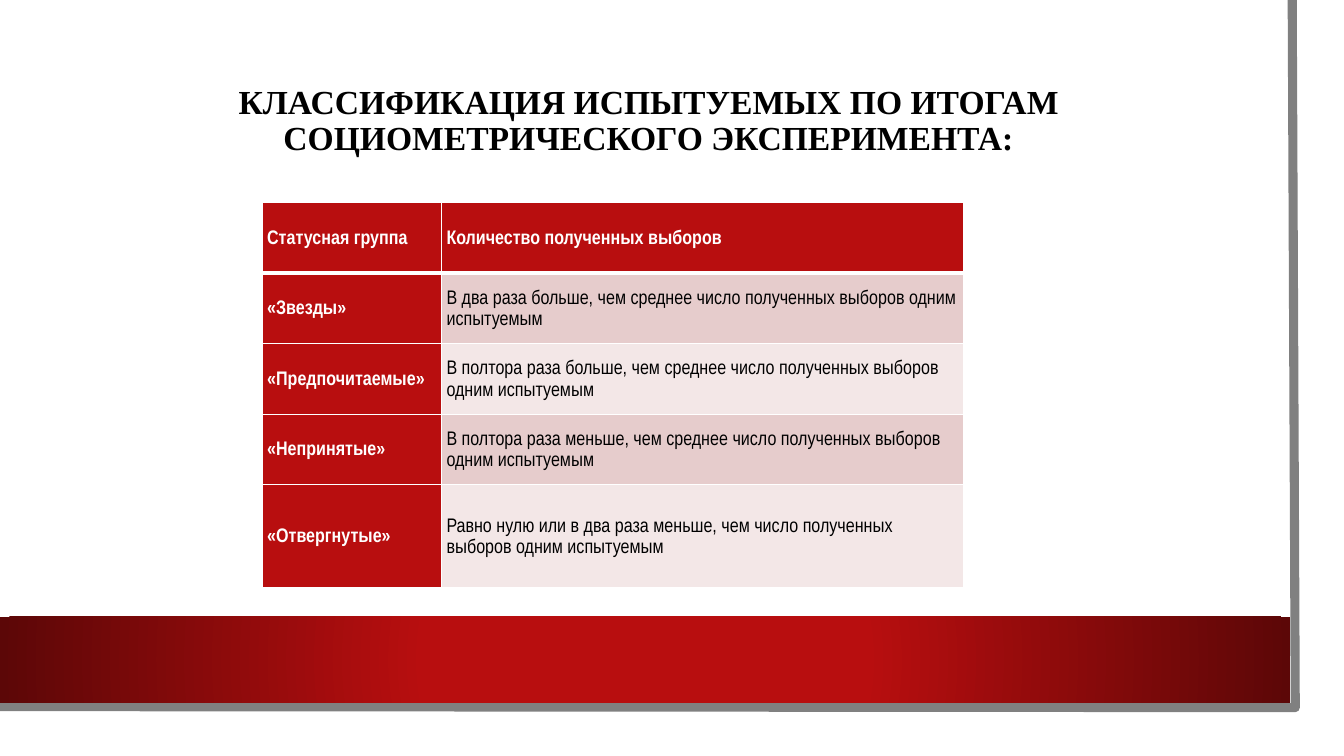
from lxml import etree
from pptx import Presentation
from pptx.dml.color import RGBColor
from pptx.enum.shapes import MSO_SHAPE
from pptx.enum.text import MSO_ANCHOR, PP_ALIGN
from pptx.oxml.ns import qn
from pptx.util import Pt

RECTANGLE = MSO_SHAPE.RECTANGLE
MIDDLE = MSO_ANCHOR.MIDDLE
CENTER = PP_ALIGN.CENTER

WHITE, BLACK, GRAY = "FFFFFF", "000000", "808080"
RED, DARK_RED = "B80E0F", "5C0707"
ROW_TINTS = ("E6CCCC", "F3E7E7")

TITLE = "КЛАССИФИКАЦИЯ ИСПЫТУЕМЫХ ПО ИТОГАМ СОЦИОМЕТРИЧЕСКОГО ЭКСПЕРИМЕНТА:"
STATUS_ROWS = [
    ("Статусная группа", "Количество полученных выборов"),
    ("«Звезды»", "В два раза больше, чем среднее число полученных выборов одним испытуемым"),
    ("«Предпочитаемые»", "В полтора раза больше, чем среднее число полученных выборов одним испытуемым"),
    ("«Непринятые»", "В полтора раза меньше, чем среднее число полученных выборов одним испытуемым"),
    ("«Отвергнутые»", "Равно нулю или в два раза меньше, чем число полученных выборов одним испытуемым"),
]
COLUMN_WIDTHS = (128.16, 372.96)
ROW_HEIGHTS = (50.4, 50.4, 50.4, 50.4, 73.44)

TITLE_FONT = {"name": "Times New Roman", "size": Pt(24), "bold": True}
CELL_FONT = {"name": "Arial Narrow", "size": Pt(14)}
TITLE_FRAME = {"word_wrap": True, "vertical_anchor": MIDDLE, "margin_bottom": Pt(29)}
TITLE_PARAGRAPH = {"alignment": CENTER, "line_spacing": 0.9}
CELL_PARAGRAPH = {"line_spacing": 1.15, "space_after": Pt(6)}
CELL_FRAME = {
    "vertical_anchor": MIDDLE,
    "margin_left": Pt(3.6),
    "margin_top": Pt(2.9),
    "margin_right": Pt(2.9),
    "margin_bottom": Pt(2.9),
}


def rgb(color):
    return RGBColor.from_string(color)


def apply(target, values):
    for name, value in values.items():
        setattr(target, name, value)


def write(frame, text, paragraph_format, font_format, color):
    paragraph = frame.paragraphs[0]
    apply(paragraph, paragraph_format)
    run = paragraph.add_run()
    run.text = text
    apply(run.font, font_format)
    run.font.color.rgb = rgb(color)


def add_panel(slide, left, top, width, height):
    panel = slide.shapes.add_shape(RECTANGLE, Pt(left), Pt(top), Pt(width), Pt(height))
    panel.shadow.inherit = False
    panel.line.fill.background()
    panel.fill.solid()
    panel.fill.fore_color.rgb = rgb(WHITE)
    return panel


def fill_radial(shape, stops):
    shape.fill.background()
    properties = shape.fill._xPr
    no_fill = properties.find(qn("a:noFill"))
    gradient = etree.Element(qn("a:gradFill"), rotWithShape="1")
    stop_list = etree.SubElement(gradient, qn("a:gsLst"))
    for position, color in stops:
        stop = etree.SubElement(stop_list, qn("a:gs"), pos=str(position * 1000))
        etree.SubElement(stop, qn("a:srgbClr"), val=color)
    circle = etree.SubElement(gradient, qn("a:path"), {"path": "circle"})
    etree.SubElement(circle, qn("a:fillToRect"), {side: "50000" for side in "ltrb"})
    properties.replace(no_fill, gradient)


def add_backdrop(slide, left, top, width, height):
    # White sheet
    add_panel(slide, left, top, width, height)

    # Gray edge along the right and the bottom
    right, bottom = left + width - 18, top + height - 18
    builder = slide.shapes.build_freeform(Pt(right - 2.16), Pt(top))
    builder.add_line_segments(
        [(Pt(right), Pt(bottom)), (Pt(left - 2.16), Pt(bottom - 0.72))], close=False
    )
    edge = builder.convert_to_shape()
    edge.shadow.inherit = False
    edge.fill.background()
    edge.line.color.rgb = rgb(GRAY)
    edge.line.width = Pt(6.5)

    # Red band
    band = add_panel(slide, left, bottom - 64.8, right - 3.6, 61.2)
    fill_radial(band, [(34, RED), (100, DARK_RED)])


def add_title(slide, left, top, width, height):
    title = slide.shapes.add_textbox(Pt(left), Pt(top), Pt(width), Pt(height))
    apply(title.text_frame, TITLE_FRAME)
    write(title.text_frame, TITLE, TITLE_PARAGRAPH, TITLE_FONT, BLACK)


def add_borders(cell, bottom_width):
    properties = cell._tc.get_or_add_tcPr()
    widths = {"a:lnL": 1, "a:lnR": 1, "a:lnT": 1, "a:lnB": bottom_width}
    for index, (tag, width) in enumerate(widths.items()):
        border = etree.Element(qn(tag), w=str(Pt(width)))
        fill = etree.SubElement(border, qn("a:solidFill"))
        etree.SubElement(fill, qn("a:srgbClr"), val=WHITE)
        properties.insert(index, border)


def add_status_table(slide, left, top, width, height):
    table = slide.shapes.add_table(
        len(ROW_HEIGHTS), len(COLUMN_WIDTHS), Pt(left), Pt(top), Pt(width), Pt(height)
    ).table
    for column, column_width in zip(table.columns, COLUMN_WIDTHS):
        column.width = Pt(column_width)
    for row, row_height in zip(table.rows, ROW_HEIGHTS):
        row.height = Pt(row_height)

    for row_index, texts in enumerate(STATUS_ROWS):
        for column_index, text in enumerate(texts):
            cell = table.cell(row_index, column_index)
            is_heading = row_index == 0 or column_index == 0
            apply(cell, CELL_FRAME)
            cell.fill.solid()
            cell.fill.fore_color.rgb = rgb(RED if is_heading else ROW_TINTS[(row_index - 1) % 2])
            font = {**CELL_FONT, "bold": is_heading}
            write(cell.text_frame, text, CELL_PARAGRAPH, font, WHITE if is_heading else BLACK)
            # The first body row repeats the thick rule as its own thin top edge
            add_borders(cell, 3 if row_index == 0 else 1)


def main():
    presentation = Presentation()
    presentation.slide_width = Pt(960)
    presentation.slide_height = Pt(540)
    slide = presentation.slides.add_slide(presentation.slide_layouts[6])

    add_backdrop(slide, 0, 0, 943.2, 523.44)
    add_title(slide, 54, 54, 818.64, 90.72)
    add_status_table(slide, 187.2, 144.72, sum(COLUMN_WIDTHS), sum(ROW_HEIGHTS))

    presentation.save("out.pptx")


if __name__ == "__main__":
    main()
